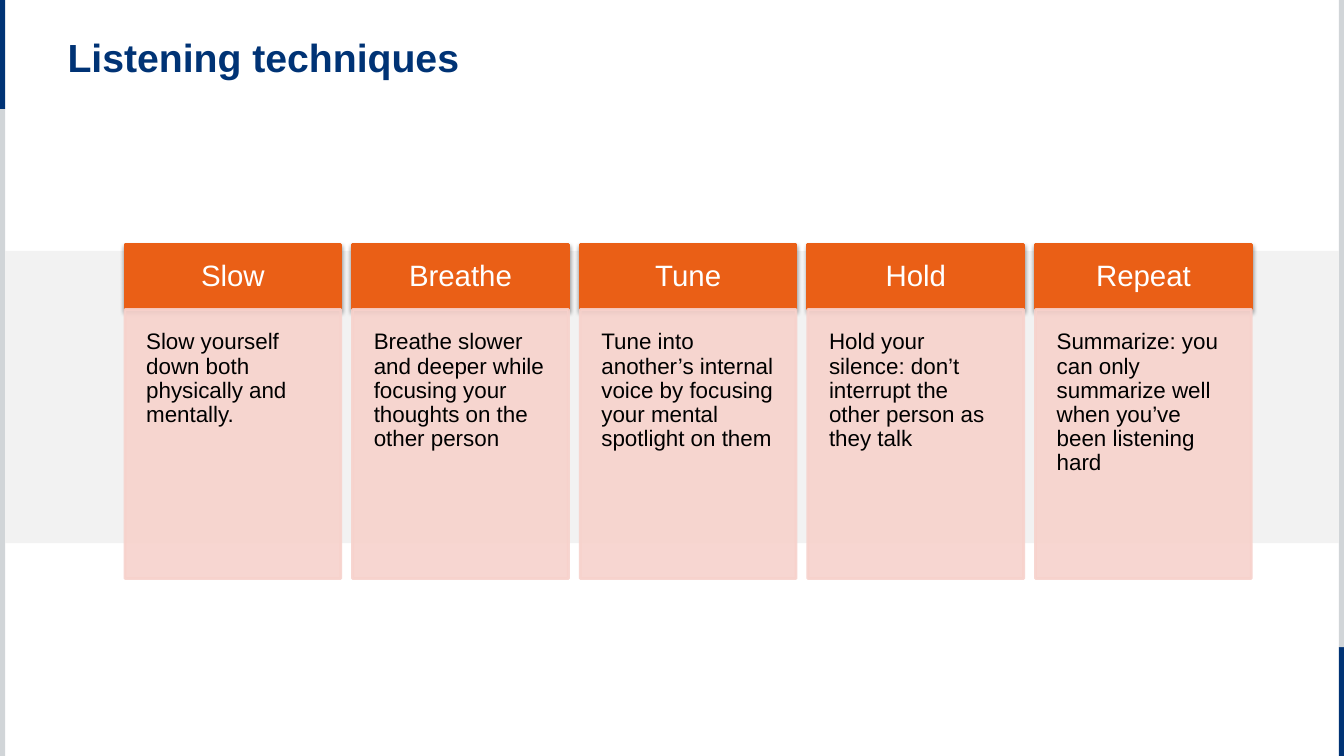
from lxml import etree
from pptx import Presentation
from pptx.dml.color import RGBColor
from pptx.enum.shapes import MSO_SHAPE
from pptx.enum.text import MSO_ANCHOR, PP_ALIGN
from pptx.oxml.ns import qn
from pptx.util import Inches, Pt

RECT = MSO_SHAPE.RECTANGLE
TOP, MIDDLE = MSO_ANCHOR.TOP, MSO_ANCHOR.MIDDLE
LEFT, CENTER = PP_ALIGN.LEFT, PP_ALIGN.CENTER

NAVY = RGBColor(0x00, 0x33, 0x75)
GRAY = RGBColor(0xD1, 0xD5, 0xD8)
PALE = RGBColor(0xF2, 0xF2, 0xF2)
ORANGE = RGBColor(0xEA, 0x5F, 0x16)
PINK = RGBColor(0xF7, 0xD2, 0xCC)
WHITE = RGBColor(0xFF, 0xFF, 0xFF)
BLACK = RGBColor(0x00, 0x00, 0x00)

TITLE = "Listening techniques"
CARDS = [
    ("Slow", "Slow yourself down both physically and mentally."),
    ("Breathe", "Breathe slower and deeper while focusing your thoughts on the other person"),
    ("Tune", "Tune into another’s internal voice by focusing your mental spotlight on them"),
    ("Hold", "Hold your silence: don’t interrupt the other person as they talk"),
    ("Repeat", "Summarize: you can only summarize well when you’ve been listening hard"),
]

# Lengths in inches
WIDE, HIGH = 13.33, 7.5
EDGE, TAB = 0.05, 1.08
BAND_TOP, BAND_HIGH = 2.49, 2.9
CARD_LEFT, CARD_TOP, CARD_WIDE = 1.24, 2.43, 2.14
PITCH = CARD_WIDE * 1.055
HEAD_HIGH, BODY_HIGH = 0.64, 2.67


def add_rect(slide, box, color):
    rect = slide.shapes.add_shape(RECT, *map(Inches, box))
    rect.shadow.inherit = False
    rect.fill.solid()
    rect.fill.fore_color.rgb = color
    rect.line.fill.background()
    return rect


def write(shape, text, size, color, align=LEFT, anchor=TOP, inset=0, after=0):
    frame = shape.text_frame
    frame.word_wrap = True
    frame.vertical_anchor = anchor
    frame.margin_left = frame.margin_right = Inches(inset)
    frame.margin_top = frame.margin_bottom = Inches(inset)
    frame.text = text
    para = frame.paragraphs[0]
    para.alignment = align
    para.line_spacing = 0.9
    para.space_before = Pt(0)
    para.space_after = Pt(after)
    para.font.name = "Arial"
    para.font.size = Pt(size)
    para.font.color.rgb = color
    return para


def outline(rect, color):
    rect.line.color.rgb = color
    rect.line.width = Pt(2)


def set_alpha(parent, percent):
    """Give every RGB colour under parent the same opacity."""
    for color in parent.iter(qn("a:srgbClr")):
        etree.SubElement(color, qn("a:alpha"), val=str(percent * 1000))


def drop_shadow(rect):
    effects = rect._element.spPr.find(qn("a:effectLst"))
    shadow = etree.SubElement(
        effects, qn("a:outerShdw"), blurRad=str(Pt(3.1)), dist=str(Pt(1.6)),
        dir="5400000", rotWithShape="0")
    etree.SubElement(shadow, qn("a:srgbClr"), val=str(BLACK))
    set_alpha(shadow, 38)


def add_card(slide, left, head, body):
    top = add_rect(slide, (left, CARD_TOP, CARD_WIDE, HEAD_HIGH), ORANGE)
    outline(top, ORANGE)
    drop_shadow(top)
    write(top, head, 21, WHITE, CENTER, MIDDLE, 0.17, 7)

    base = add_rect(slide, (left, CARD_TOP + HEAD_HIGH, CARD_WIDE, BODY_HIGH), PINK)
    outline(base, PINK)
    set_alpha(base._element.spPr, 90)
    write(base, body, 16, BLACK, inset=0.21, after=5.6)


def main():
    deck = Presentation()
    deck.slide_width, deck.slide_height = Inches(WIDE), Inches(HIGH)
    slide = deck.slides.add_slide(deck.slide_layouts[5])

    title = slide.shapes.title
    title.left, title.top = Inches(0.67), Inches(0.38)
    title.width, title.height = Inches(11.75), Inches(0.56)
    write(title, TITLE, 28, NAVY).font.bold = True

    right, rest = WIDE - EDGE, HIGH - TAB
    for box, color in [
        ((right, rest, EDGE, TAB), NAVY),
        ((right, 0, EDGE, rest), GRAY),
        ((0, TAB, EDGE, rest), GRAY),
        ((0, 0, EDGE, TAB), NAVY),
        ((EDGE, BAND_TOP, WIDE - 2 * EDGE, BAND_HIGH), PALE),
    ]:
        add_rect(slide, box, color)

    for col, (head, body) in enumerate(CARDS):
        add_card(slide, CARD_LEFT + col * PITCH, head, body)

    deck.save("out.pptx")


if __name__ == "__main__":
    main()
